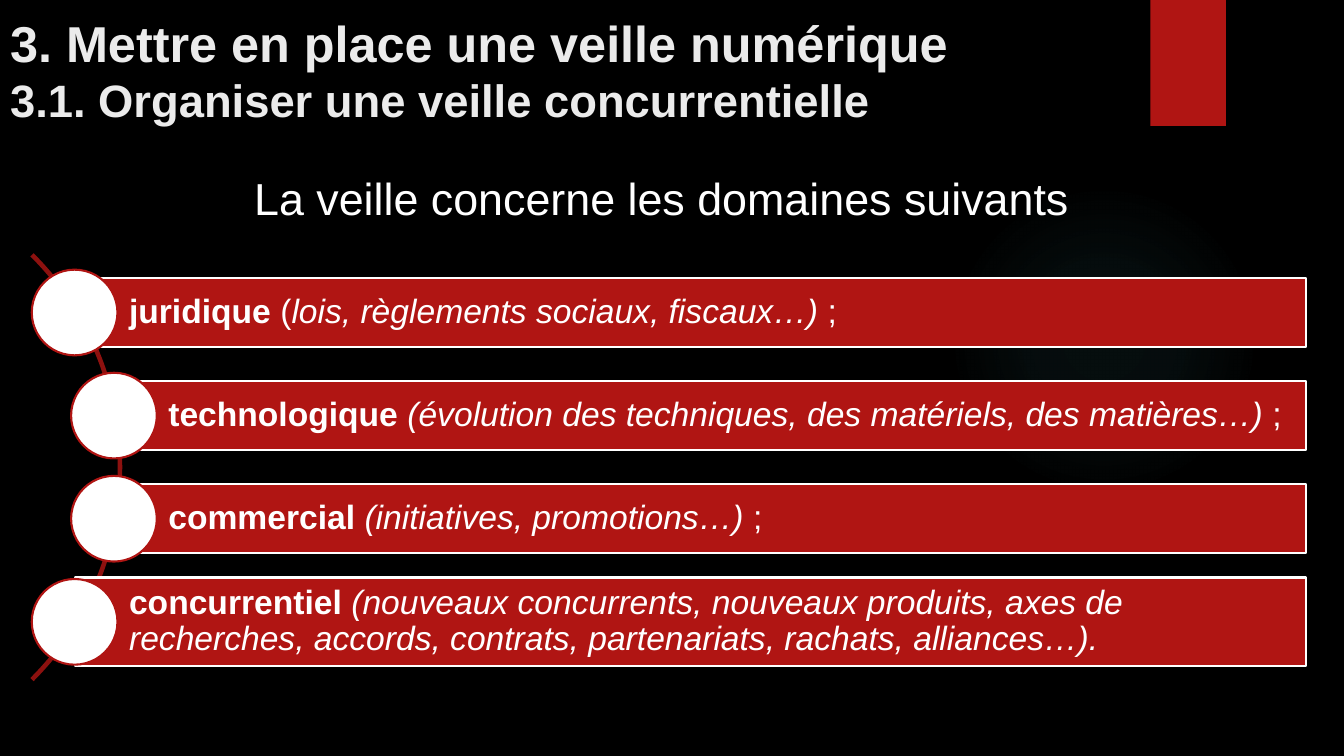
import math
from dataclasses import dataclass

import lxml.etree
import pptx
import pptx.dml.color
import pptx.enum.shapes
import pptx.enum.text
import pptx.oxml
import pptx.oxml.ns
import pptx.util

Inches = pptx.util.Inches
Shape = pptx.enum.shapes.MSO_SHAPE
Anchor = pptx.enum.text.MSO_ANCHOR
Align = pptx.enum.text.PP_ALIGN

COLORS = {
    "background": "000000",
    "red": "B01513",
    "arc": "8D110F",
    "white": "FFFFFF",
    "title": "EBEBEB",
    "glow": "50B9C1",
}
FONT = "Arial"
BAR_RIGHT = 12.95
FIRST_CENTER = 3.1
PITCH = 1.023
DOT_SIZE = 0.85
ARC_CENTER = (-1.79, 4.635)
ARC_RADIUS = 2.98


@dataclass(frozen=True)
class Span:
    text: str
    bold: bool = False
    italic: bool = False


@dataclass(frozen=True)
class Domain:
    center_x: float
    height: float
    spans: tuple[Span, ...]


DOMAINS = [
    Domain(0.74, 0.68, (
        Span("juridique", bold=True),
        Span(" ("),
        Span("lois, règlements sociaux, fiscaux…)", italic=True),
        Span(" ;"),
    )),
    Domain(1.13, 0.68, (
        Span("technologique ", bold=True),
        Span("(évolution des techniques, des matériels, des matières…)", italic=True),
        Span(" ;"),
    )),
    Domain(1.13, 0.68, (
        Span("commercial ", bold=True),
        Span("(initiatives, promotions…)", italic=True),
        Span(" ;"),
    )),
    Domain(0.74, 0.88, (
        Span("concurrentiel ", bold=True),
        Span("(nouveaux concurrents, nouveaux produits, axes de recherches, "
             "accords, contrats, partenariats, rachats, alliances…).", italic=True),
    )),
]


def color(name: str) -> pptx.dml.color.RGBColor:
    return pptx.dml.color.RGBColor.from_string(COLORS[name])


def add_span(para, span: Span, size: float, color_name: str) -> None:
    run = para.add_run()
    run.text = span.text
    run.font.name = FONT
    run.font.size = pptx.util.Pt(size)
    run.font.bold = span.bold
    run.font.italic = span.italic
    run.font.color.rgb = color(color_name)


def add_shape(page, kind, left: float, top: float, width: float, height: float,
              fill: str, line: str | None = None):
    shape = page.shapes.add_shape(
        kind, Inches(left), Inches(top), Inches(width), Inches(height))
    shape.shadow.inherit = False
    shape.fill.solid()
    shape.fill.fore_color.rgb = color(fill)
    if line is None:
        shape.line.fill.background()
    else:
        shape.line.color.rgb = color(line)
        shape.line.width = pptx.util.Pt(1.5)
    return shape


def add_glow(page) -> None:
    glow = add_shape(page, Shape.OVAL, 9.41, 1.83, 3.08, 3.08, "glow")
    stops = "".join(
        f'<a:gs pos="{position * 1000}"><a:srgbClr val="{COLORS["glow"]}">'
        f'<a:alpha val="{alpha * 1000}"/></a:srgbClr></a:gs>'
        for position, alpha in ((0, 7), (36, 6), (69, 0)))
    gradient = pptx.oxml.parse_xml(
        f'<a:gradFill {pptx.oxml.ns.nsdecls("a")}><a:gsLst>{stops}</a:gsLst>'
        '<a:path path="circle"><a:fillToRect l="50000" t="50000" r="50000" b="50000"/>'
        '</a:path></a:gradFill>')
    properties = glow.element.spPr
    properties.replace(properties.find(pptx.oxml.ns.qn("a:solidFill")), gradient)


def add_title(page) -> None:
    title = page.shapes.title
    title.left, title.top = Inches(0), Inches(0)
    title.width, title.height = Inches(11.71), Inches(1.31)
    frame = title.text_frame
    frame.auto_size = pptx.enum.text.MSO_AUTO_SIZE.NONE
    frame.word_wrap = True
    frame.vertical_anchor = Anchor.BOTTOM
    para = frame.paragraphs[0]
    para.alignment = Align.LEFT
    add_span(para, Span("3. Mettre en place une veille numérique", bold=True), 36, "title")
    para.add_line_break()
    add_span(para, Span("3.1. Organiser une veille concurrentielle", bold=True), 32.4, "title")


def add_heading(page) -> None:
    box = page.shapes.add_textbox(Inches(2.36), Inches(1.64), Inches(8.41), Inches(0.64))
    box.text_frame.word_wrap = True
    para = box.text_frame.paragraphs[0]
    para.alignment = Align.CENTER
    add_span(para, Span("La veille concerne les domaines suivants"), 32, "white")


def add_arc(page) -> None:
    points = [
        (Inches(ARC_CENTER[0] + ARC_RADIUS * math.cos(math.radians(angle))),
         Inches(ARC_CENTER[1] + ARC_RADIUS * math.sin(math.radians(angle))))
        for angle in range(-45, 46)]
    builder = page.shapes.build_freeform(*points[0])
    builder.add_line_segments(points[1:], close=False)
    arc = builder.convert_to_shape()
    arc.shadow.inherit = False
    arc.fill.background()
    arc.line.color.rgb = color("arc")
    arc.line.width = pptx.util.Pt(3.25)


def add_domain(page, domain: Domain, center_y: float) -> None:
    bar = add_shape(page, Shape.RECTANGLE, domain.center_x, center_y - domain.height / 2,
                    BAR_RIGHT - domain.center_x, domain.height, "red", "white")
    frame = bar.text_frame
    frame.word_wrap = True
    frame.vertical_anchor = Anchor.MIDDLE
    frame.margin_left = Inches(0.54)
    frame.margin_top = frame.margin_right = frame.margin_bottom = Inches(0.07)
    para = frame.paragraphs[0]
    para.alignment = Align.LEFT
    para.line_spacing = 0.9
    for span in domain.spans:
        add_span(para, span, 24, "white")
    add_shape(page, Shape.OVAL, domain.center_x - DOT_SIZE / 2, center_y - DOT_SIZE / 2,
              DOT_SIZE, DOT_SIZE, "white", "red")


def main() -> None:
    deck = pptx.Presentation()
    deck.slide_width, deck.slide_height = Inches(13.33), Inches(7.5)
    page = deck.slides.add_slide(deck.slide_layouts[5])
    page.background.fill.solid()
    page.background.fill.fore_color.rgb = color("background")
    add_glow(page)
    add_shape(page, Shape.RECTANGLE, 11.41, 0, 0.75, 1.25, "red")
    add_title(page)
    add_heading(page)
    add_arc(page)
    for index, domain in enumerate(DOMAINS):
        add_domain(page, domain, FIRST_CENTER + index * PITCH)
    deck.save("out.pptx")


if __name__ == "__main__":
    main()
